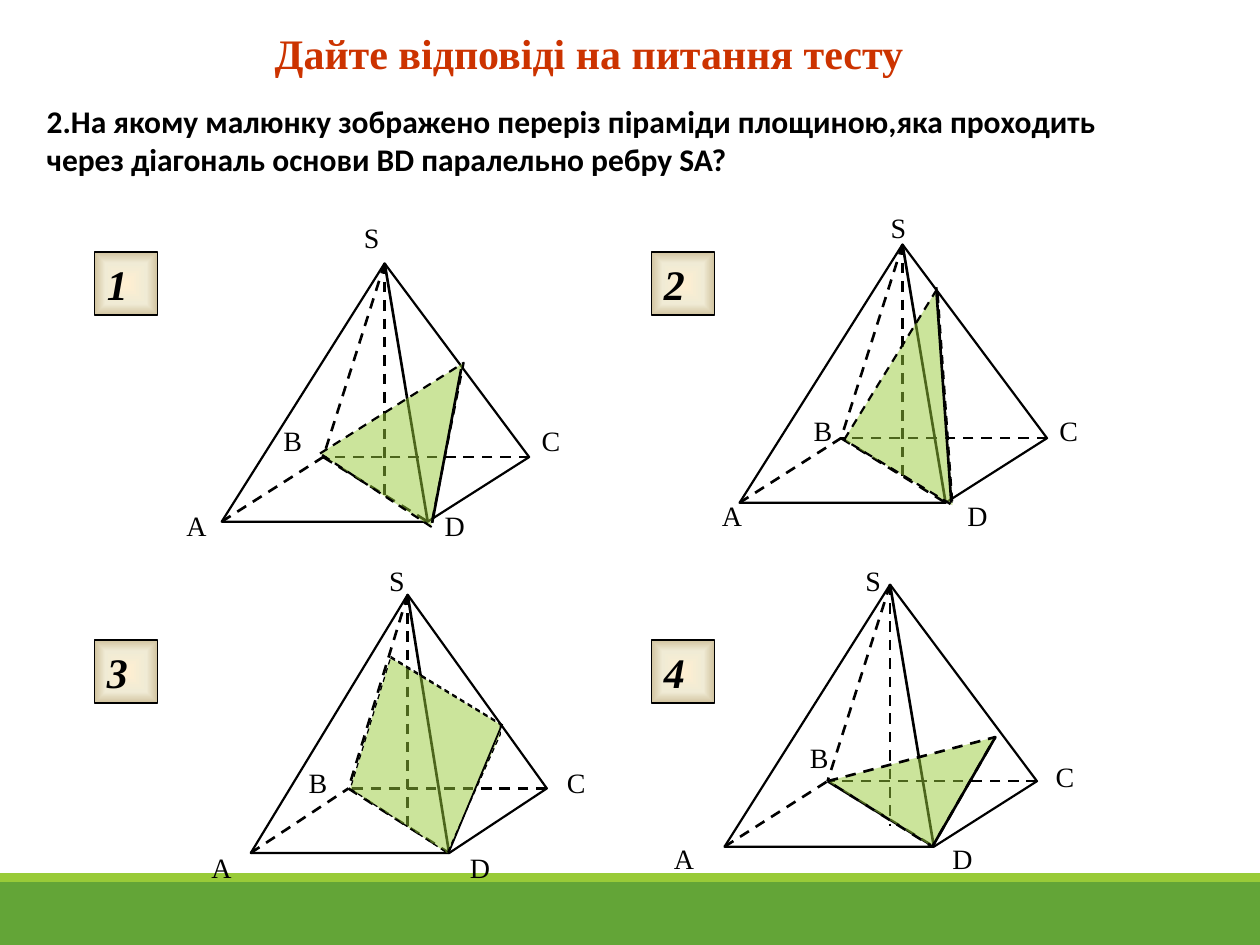
from lxml import etree
from pptx import Presentation
from pptx.dml.color import RGBColor
from pptx.enum import dml, shapes, text
from pptx.oxml import parse_xml
from pptx.oxml.ns import nsdecls, qn
from pptx.util import Inches, Pt

BLACK = RGBColor(0x00, 0x00, 0x00)
RED = RGBColor(0xCC, 0x33, 0x00)
GREEN = RGBColor(0x63, 0xA5, 0x37)
LIME = RGBColor(0x99, 0xCB, 0x38)
BUTTON_STOPS = ((0, "FFEFD1"), (65000, "F0EBD5"), (100000, "D1C39F"))
SERIF = "Times New Roman"

VERTICES = {"A": (0, 1), "B": (0.33, 0.75), "C": (1, 0.75), "D": (0.67, 1),
            "S": (0.53, 0), "O": (0.53, 0.92)}
HIDDEN_EDGES = ("SB", "CB", "AB", "BD", "SO")

FIGURES = (
    {"box": (1.76, 2.09, 2.44, 2.05), "number": "1", "button": (0.75, 2),
     "section": ((0.78, 1.51), (1.92, 0.79), (1.66, 2.09)), "outline": 1.25,
     "edges": (((1.67, 2.06), (1.9, 0.84), 1.5, False),),
     "labels": {"A": (-0.38, 1.9), "B": (0.39, 1.22), "C": (2.44, 1.22),
                "D": (1.67, 1.9), "S": (1.03, -0.39)}},
    {"box": (5.87, 1.94, 2.44, 2.05), "number": "2", "button": (5.17, 2),
     "section": ((0.83, 1.55), (1.57, 0.35), (1.69, 2.07)), "outline": 1.25,
     "edges": (((1.68, 2.05), (1.56, 0.34), 1.5, False),),
     "labels": {"A": (-0.24, 1.97), "B": (0.49, 1.29), "C": (2.44, 1.29),
                "D": (1.71, 1.97), "S": (1.1, -0.32)}},
    {"box": (1.99, 4.72, 2.35, 2.05), "number": "3", "button": (0.75, 5.08),
     "section": ((1.11, 0.5), (1.98, 1.03), (1.98, 1.11), (1.56, 2.05), (0.79, 1.54)),
     "outline": 0,
     "edges": (((1.57, 2.05), (1.99, 1.04), 1, False),
               ((1.11, 0.49), (2.01, 1.04), 0.75, True)),
     "labels": {"A": (-0.41, 1.98), "B": (0.36, 1.31), "C": (2.41, 1.31),
                "D": (1.64, 1.98), "S": (1, -0.3)}},
    {"box": (5.75, 4.64, 2.48, 2.08), "number": "4", "button": (5.17, 5.08),
     "section": ((0.82, 1.56), (2.15, 1.21), (1.65, 2.08)), "outline": 1.5,
     "edges": (((1.65, 2.08), (2.15, 1.21), 1.5, False),),
     "labels": {"A": (-0.5, 1.99), "B": (0.58, 1.19), "C": (2.53, 1.34),
                "D": (1.71, 1.99), "S": (1.02, -0.22)}},
)


def style_text(frame, words, size, font=SERIF, color=BLACK, bold=False, italic=False):
    """Fill a text frame with one left-aligned paragraph."""
    frame.text = words
    paragraph = frame.paragraphs[0]
    paragraph.alignment = text.PP_ALIGN.LEFT
    paragraph.space_before = Pt(0)
    style = paragraph.runs[0].font
    style.name, style.size, style.color.rgb = font, Pt(size), color
    style.bold, style.italic = bold, italic


def style_line(line, width, dashed=False):
    """Make a line black, solid or dashed."""
    line.color.rgb = BLACK
    line.width = Pt(width)
    if dashed:
        line.dash_style = dml.MSO_LINE.DASH


def add_edge(slide, start, end, width=1.5, dashed=False):
    """Join two points given in inches."""
    edge = slide.shapes.add_connector(
        shapes.MSO_CONNECTOR.STRAIGHT, *(Inches(v) for v in (*start, *end)))
    style_line(edge.line, width, dashed)
    etree.SubElement(edge._element.spPr, qn("a:effectLst"))


def add_polygon(slide, corners, width, dashed=False):
    """Draw a closed, unfilled polygon through points given in inches."""
    points = [(Inches(x), Inches(y)) for x, y in corners]
    builder = slide.shapes.build_freeform(*points[0])
    builder.add_line_segments(points[1:], close=True)
    polygon = builder.convert_to_shape()
    polygon.shadow.inherit = False
    polygon.fill.background()
    style_line(polygon.line, width, dashed)
    return polygon


def add_pyramid(slide, box, section, outline, edges, labels):
    """Draw a pyramid in its box, with its section and vertex labels."""
    left, top, width, height = box
    vertex = {name: (left + x * width, top + y * height)
              for name, (x, y) in VERTICES.items()}

    def shifted(point):
        return left + point[0], top + point[1]

    add_polygon(slide, [vertex[name] for name in "ASCD"], 1.25)
    add_edge(slide, vertex["S"], vertex["D"])
    for start, end in HIDDEN_EDGES:
        add_edge(slide, vertex[start], vertex[end], dashed=True)

    plane = add_polygon(slide, [shifted(point) for point in section], outline, dashed=True)
    plane.fill.solid()
    plane.fill.fore_color.rgb = LIME
    tint = plane._element.spPr.find(qn("a:solidFill")).find(qn("a:srgbClr"))
    etree.SubElement(tint, qn("a:alpha"), val="50000")
    for start, end, weight, dashed in edges:
        add_edge(slide, shifted(start), shifted(end), weight, dashed)

    for name, offset in labels.items():
        x, y = shifted(offset)
        label = slide.shapes.add_textbox(Inches(x), Inches(y), Inches(0.55), Inches(0.37))
        label.text_frame.word_wrap = True
        style_text(label.text_frame, name, 16)


def add_number_button(slide, left, top, number):
    """Add a bevelled answer button with a gradient fill."""
    button = slide.shapes.add_shape(
        shapes.MSO_SHAPE.ACTION_BUTTON_CUSTOM,
        Inches(left), Inches(top), Inches(0.5), Inches(0.5))
    button.shadow.inherit = False
    style_line(button.line, 0.75)
    stops = "".join(f'<a:gs pos="{place}"><a:srgbClr val="{color}"/></a:gs>'
                    for place, color in BUTTON_STOPS)
    gradient = parse_xml(
        f'<a:gradFill {nsdecls("a")} rotWithShape="1"><a:gsLst>{stops}</a:gsLst>'
        '<a:path path="rect"><a:fillToRect l="50000" t="50000" r="50000" b="50000"/>'
        '</a:path></a:gradFill>')
    button._element.spPr.find(qn("a:prstGeom")).addnext(gradient)
    button.text_frame.word_wrap = False
    button.text_frame.vertical_anchor = text.MSO_ANCHOR.MIDDLE
    style_text(button.text_frame, number, 24, bold=True, italic=True)


def place_heading(holder, box, words, size, font, color):
    """Move a placeholder to its box and set its bold text."""
    holder.left, holder.top, holder.width, holder.height = (Inches(v) for v in box)
    frame = holder.text_frame
    frame.word_wrap = True
    frame.auto_size = text.MSO_AUTO_SIZE.NONE
    frame.vertical_anchor = text.MSO_ANCHOR.TOP
    style_text(frame, words, size, font, color, bold=True)
    properties = frame.paragraphs[0]._p.get_or_add_pPr()
    properties.set("marL", "0")
    properties.set("indent", "0")
    etree.SubElement(properties, qn("a:buNone"))


def add_footer(slide, top):
    """Add the two green bands along the bottom."""
    for offset, height, color in ((0.07, 0.5, GREEN), (0, 0.07, LIME)):
        band = slide.shapes.add_shape(
            shapes.MSO_SHAPE.RECTANGLE, 0, Inches(top + offset), Inches(10), Inches(height))
        band.shadow.inherit = False
        band.fill.solid()
        band.fill.fore_color.rgb = color
        band.line.fill.background()


def main():
    """Build the test question slide."""
    deck = Presentation()
    deck.slide_width, deck.slide_height = Inches(10), Inches(7.5)
    slide = deck.slides.add_slide(deck.slide_layouts[1])
    add_footer(slide, 6.93)
    place_heading(slide.shapes.title, (2.08, 0.17, 6, 0.5),
                  "Дайте відповіді на питання тесту", 24, SERIF, RED)
    place_heading(slide.placeholders[1], (0.27, 0.76, 8.9, 1.15),
                  "2.На якому малюнку зображено переріз піраміди площиною,яка проходить "
                  "через діагональ основи BD паралельно ребру SA?", 18, "Calibri", BLACK)
    for figure in FIGURES:
        add_pyramid(slide, figure["box"], figure["section"], figure["outline"],
                    figure["edges"], figure["labels"])
        add_number_button(slide, *figure["button"], figure["number"])
    deck.save("out.pptx")


if __name__ == "__main__":
    main()
